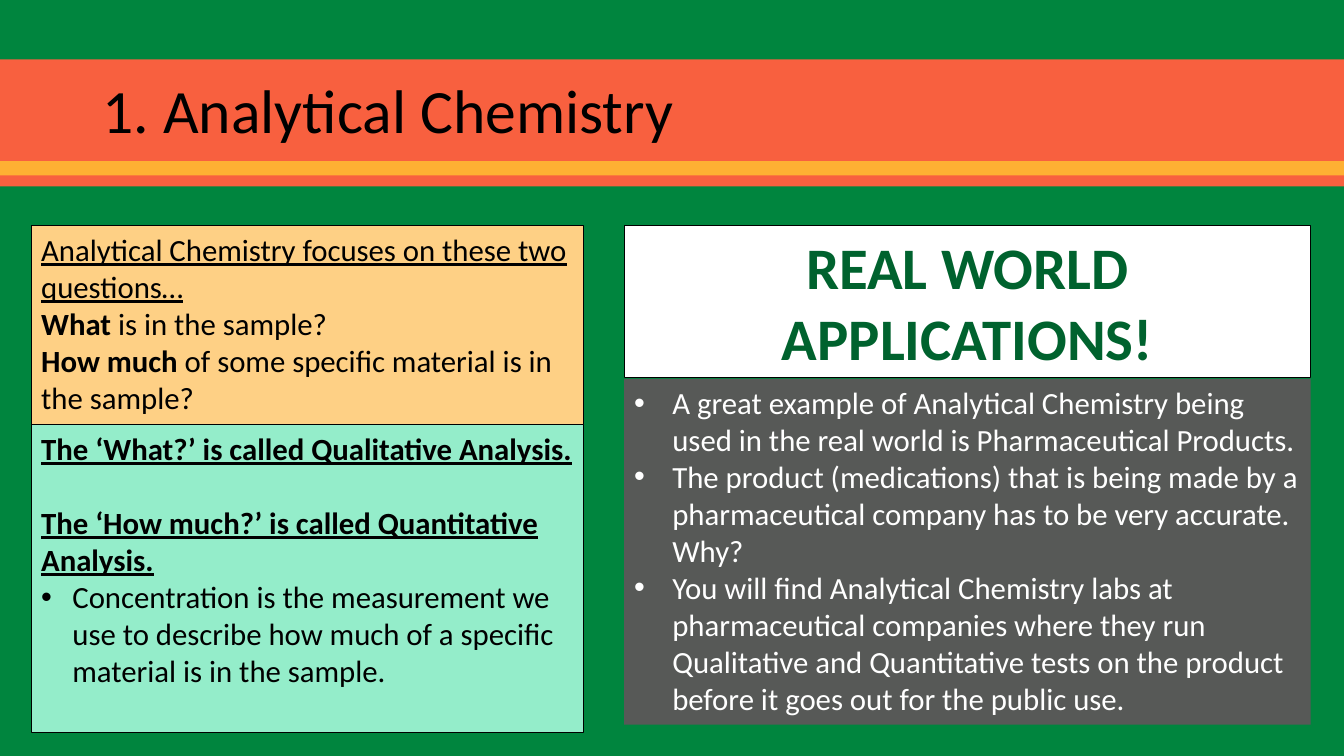
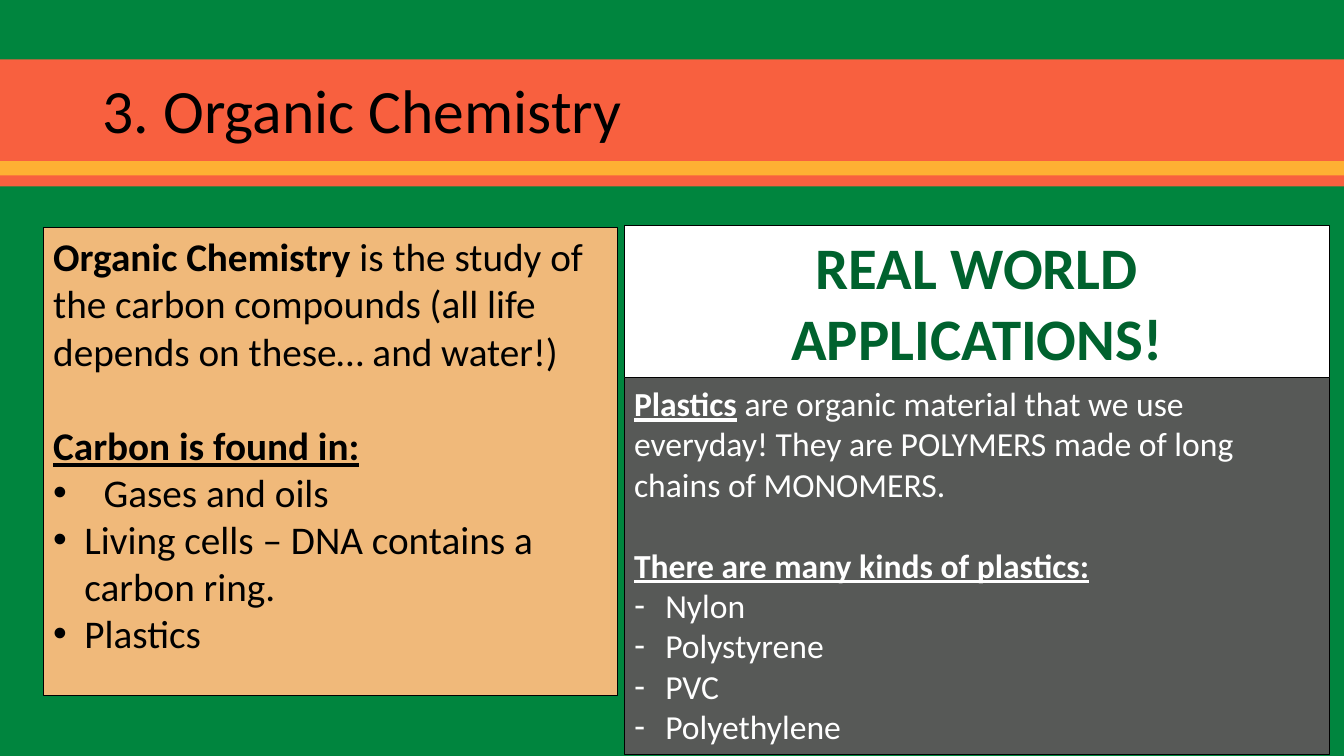
from lxml import etree
from pptx import Presentation
from pptx.dml.color import RGBColor
from pptx.enum.shapes import MSO_SHAPE
from pptx.enum.text import MSO_ANCHOR, PP_ALIGN
from pptx.oxml.ns import qn
from pptx.util import Inches, Pt

GREEN = RGBColor(0x00, 0x85, 0x3E)
DARK_GREEN = RGBColor(0x00, 0x62, 0x2E)
CORAL = RGBColor(0xF8, 0x60, 0x3F)
AMBER = RGBColor(0xFE, 0xB0, 0x33)
PEACH = RGBColor(0xFE, 0xD0, 0x85)
MINT = RGBColor(0x94, 0xED, 0xCA)
TAN = RGBColor(0xF0, 0xB9, 0x7A)
GRAY = RGBColor(0x57, 0x59, 0x57)
BLACK = RGBColor(0x00, 0x00, 0x00)
WHITE = RGBColor(0xFF, 0xFF, 0xFF)

FONT = "Calibri"
LINE_HEIGHT = 1.22
PLAIN, BOLD, UNDERLINE = {}, {"bold": True}, {"underline": True}
STRONG = {"bold": True, "underline": True}
BULLET = {"bullet": "•", "indent": 0.31}
WIDE_BULLET = {"bullet": "•", "indent": 0.38}
LOOSE_BULLET = {"bullet": "•", "indent": 0.5}
DASH = {"bullet": "-", "indent": 0.31}
GAP = {"gap": True}


def add_box(slide, place, fill, line=None):
    shape = slide.shapes.add_shape(MSO_SHAPE.RECTANGLE, *map(Inches, place))
    shape.shadow.inherit = False
    shape.fill.solid()
    shape.fill.fore_color.rgb = fill
    if line is None:
        shape.line.fill.background()
    else:
        shape.line.color.rgb = line
        shape.line.width = Pt(0.75)
    return shape


def write_text(shape, paragraphs, size, color, align=PP_ALIGN.LEFT, anchor=MSO_ANCHOR.TOP):
    frame = shape.text_frame
    frame.word_wrap = True
    frame.vertical_anchor = anchor
    for index, (layout, runs) in enumerate(paragraphs):
        paragraph = frame.paragraphs[0] if index == 0 else frame.add_paragraph()
        if "bullet" in layout:
            properties = paragraph._p.get_or_add_pPr()
            properties.set("marL", str(Inches(layout["indent"])))
            properties.set("indent", str(-Inches(layout["indent"])))
            etree.SubElement(properties, qn("a:buFont")).set("typeface", "Arial")
            etree.SubElement(properties, qn("a:buChar")).set("char", layout["bullet"])
        paragraph.alignment = align
        if "gap" in layout:
            paragraph.space_before = Pt(round(size * LINE_HEIGHT))
        for text, style in runs:
            run = paragraph.add_run()
            run.text = text
            run.font.color.rgb = color
            for name, value in {"name": FONT, "size": Pt(size), **style}.items():
                setattr(run.font, name, value)


SLIDES = [
    {
        "title": "1. Analytical Chemistry",
        "heading_width": 6.81,
        "panels": [
            ((0.31, 2.24, 5.48, 1.97), PEACH, BLACK, 22, BLACK, [
                (PLAIN, [("Analytical Chemistry focuses on these two questions…", UNDERLINE)]),
                (PLAIN, [("What", BOLD), (" is in the sample?", PLAIN)]),
                (PLAIN, [("How much ", BOLD),
                         ("of some specific material is in the sample?", PLAIN)]),
            ]),
            ((0.31, 4.21, 5.48, 3.06), MINT, BLACK, 22, BLACK, [
                (PLAIN, [("The ‘What?’ is called Qualitative Analysis.", STRONG)]),
                (GAP, [("The ‘How much?’ is called Quantitative Analysis.", STRONG)]),
                (BULLET, [("Concentration is the measurement we use to describe how much "
                           "of a specific material is in the sample.", PLAIN)]),
            ]),
            ((6.19, 3.76, 6.81, 3.43), GRAY, None, 22, WHITE, [
                (WIDE_BULLET, [("A great example of Analytical Chemistry being used in the "
                                "real world is Pharmaceutical Products.", PLAIN)]),
                (WIDE_BULLET, [("The product (medications) that is being made by a "
                                "pharmaceutical company has to be very accurate. Why?", PLAIN)]),
                (WIDE_BULLET, [("You will find Analytical Chemistry labs at pharmaceutical "
                                "companies where they run Qualitative and Quantitative tests on "
                                "the product before it goes out for the public use.", PLAIN)]),
            ]),
        ],
    },
    {
        "title": "3. Organic Chemistry",
        "heading_width": 7,
        "panels": [
            ((0.43, 2.26, 5.7, 4.64), TAN, BLACK, 28, BLACK, [
                (PLAIN, [("Organic Chemistry ", BOLD),
                         ("is the study of the carbon compounds (all life depends on "
                          "these… and water!)", PLAIN)]),
                (GAP, [("Carbon is found in:", STRONG)]),
                (LOOSE_BULLET, [("Gases and oils", PLAIN)]),
                (BULLET, [("Living cells – DNA contains a carbon ring.", PLAIN)]),
                (BULLET, [("Plastics", PLAIN)]),
            ]),
            ((6.19, 3.75, 7, 3.74), GRAY, BLACK, 24, WHITE, [
                (PLAIN, [("Plastics", STRONG),
                         (" are organic material that we use everyday! They are POLYMERS "
                          "made of long chains of MONOMERS.", PLAIN)]),
                (GAP, [("There are many kinds of plastics:", STRONG)]),
                *[(DASH, [(plastic, PLAIN)])
                  for plastic in ("Nylon", "Polystyrene", "PVC", "Polyethylene")],
            ]),
        ],
    },
]

presentation = Presentation()
presentation.slide_width = Inches(13.33)
presentation.slide_height = Inches(7.5)
background = presentation.slide_master.background.fill
background.solid()
background.fore_color.rgb = GREEN

for content in SLIDES:
    slide = presentation.slides.add_slide(presentation.slide_layouts[6])
    add_box(slide, (0, 0.59, 13.33, 1.26), CORAL)
    add_box(slide, (0, 1.6, 13.33, 0.14), AMBER)
    title = slide.shapes.add_textbox(*map(Inches, (0.92, 0.4, 11.5, 1.45)))
    write_text(title, [(PLAIN, [(content["title"], PLAIN)])], 44, BLACK,
               anchor=MSO_ANCHOR.MIDDLE)
    title.text_frame.paragraphs[0].line_spacing = 0.9

    for place, fill, line, size, color, paragraphs in content["panels"]:
        write_text(add_box(slide, place, fill, line), paragraphs, size, color)

    heading = add_box(slide, (6.19, 2.24, content["heading_width"], 1.51), WHITE, BLACK)
    write_text(heading, [(PLAIN, [("REAL WORLD APPLICATIONS!", BOLD)])], 42, DARK_GREEN,
               align=PP_ALIGN.CENTER)

presentation.save("out.pptx")
